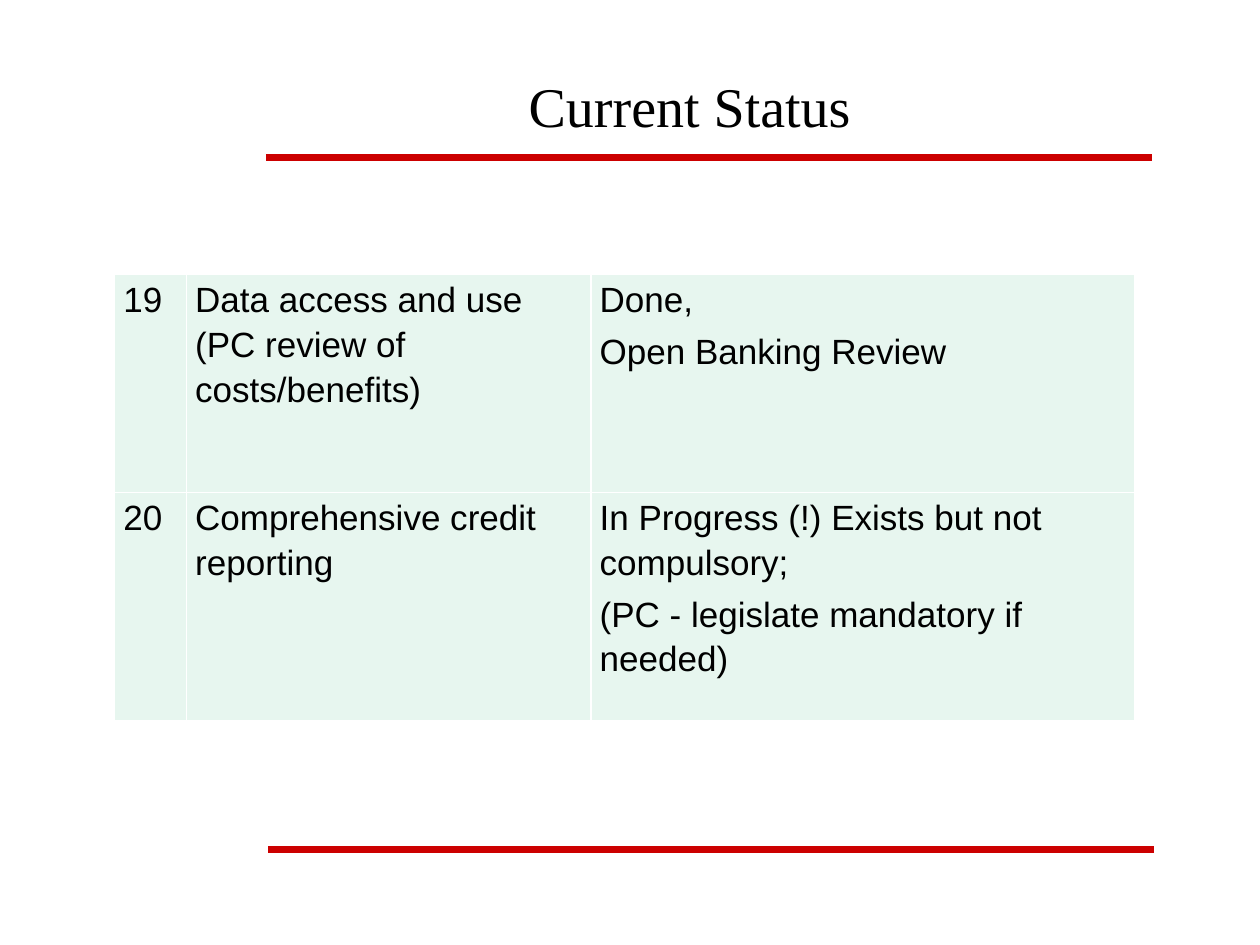
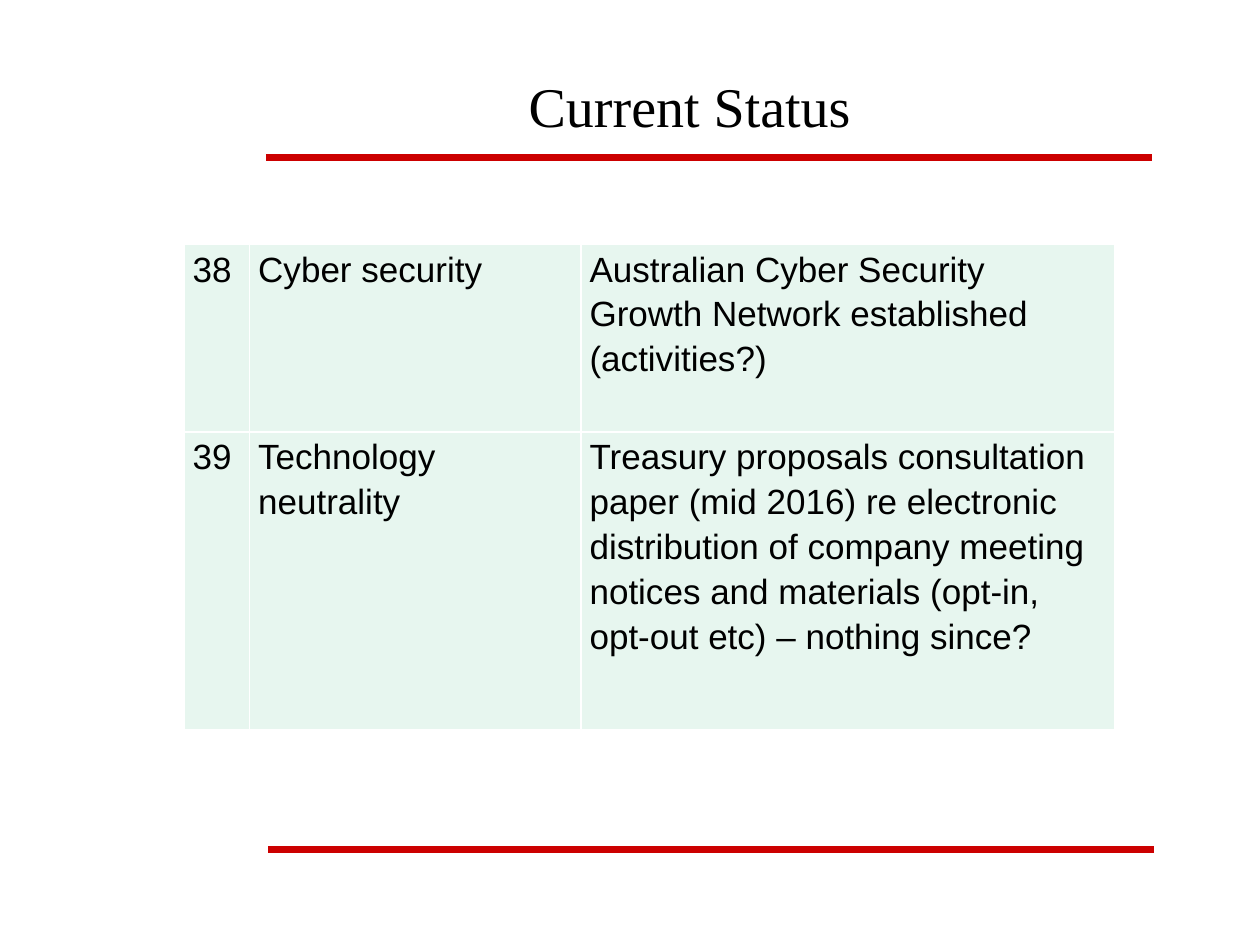
from dataclasses import dataclass

from lxml import etree
from pptx import Presentation
from pptx import util as u
from pptx.dml.color import RGBColor
from pptx.enum import shapes, text
from pptx.oxml import ns

COLORS = {"rule": "CC0000", "ink": "000000", "cell": "E7F6EF", "border": "FFFFFF"}
TITLE_FONT, BODY_FONT = "Times New Roman", "Arial"
WIDTH, HEIGHT = u.Inches(10), u.Inches(7.5)
BLANK_LAYOUT = 6


@dataclass(frozen=True)
class Rule:
    left: float
    top: float
    width: float = 70.3


@dataclass(frozen=True)
class Status:
    """A recommendation; each string in progress is a paragraph."""
    number: str
    topic: str
    progress: tuple[str, ...]
    height: float


@dataclass(frozen=True)
class StatusTable:
    left: float
    top: float
    columns: tuple[float, ...]
    rows: tuple[Status, ...]


RULES = (Rule(21.3, 89.87), Rule(21.1, 16.67))

STATUS_TABLES = (
    StatusTable(9.1, 29.07, (5.7, 32.1, 43.2), (
        Status("19", "Data access and use (PC review of costs/benefits)",
               ("Done,", "Open Banking Review"), 23.07),
        Status("20", "Comprehensive credit reporting",
               ("In Progress (!) Exists but not compulsory;",
                "(PC - legislate mandatory if needed)"), 24.13),
    )),
    StatusTable(14.6, 25.87, (5.2, 26.3, 42.4), (
        Status("38", "Cyber security",
               ("Australian Cyber Security Growth Network established (activities?)",),
               19.87),
        Status("39", "Technology neutrality",
               ("Treasury proposals consultation paper (mid 2016) re electronic "
                "distribution of company meeting notices and materials "
                "(opt-in, opt-out etc) – nothing since?",), 31.47),
    )),
)


def across(percent: float) -> int:
    """Length as a percentage of the slide's width."""
    return round(WIDTH * percent / 100)


def down(percent: float) -> int:
    """Length as a percentage of the slide's height."""
    return round(HEIGHT * percent / 100)


def color(name: str) -> RGBColor:
    return RGBColor.from_string(COLORS[name])


def style_font(paragraph, name: str, size: float) -> None:
    paragraph.font.name = name
    paragraph.font.size = u.Pt(size)
    paragraph.font.color.rgb = color("ink")


def draw_rule(slide, rule: Rule) -> None:
    line = slide.shapes.add_connector(
        shapes.MSO_CONNECTOR.STRAIGHT, across(rule.left), down(rule.top),
        across(rule.left + rule.width), down(rule.top))
    line.line.color.rgb = color("rule")
    line.line.width = u.Pt(4)
    etree.SubElement(line._element.spPr, ns.qn("a:effectLst"))


def draw_title(slide, wording: str) -> None:
    frame = slide.shapes.add_textbox(
        across(17.8), down(5.6), across(73.9), down(11.07)).text_frame
    frame.word_wrap = True
    frame.vertical_anchor = text.MSO_ANCHOR.MIDDLE
    title = frame.paragraphs[0]
    title.text = wording
    title.alignment = text.PP_ALIGN.CENTER
    style_font(title, TITLE_FONT, 32)


def add_borders(cell) -> None:
    properties = cell._tc.get_or_add_tcPr()
    for position, side in enumerate(("lnL", "lnR", "lnT", "lnB")):
        border = etree.Element(ns.qn(f"a:{side}"), w=str(u.Pt(1)))
        fill = etree.SubElement(border, ns.qn("a:solidFill"))
        etree.SubElement(fill, ns.qn("a:srgbClr"), val=COLORS["border"])
        properties.insert(position, border)


def fill_cell(cell, wordings: tuple[str, ...]) -> None:
    cell.margin_left = cell.margin_right = u.Inches(0.07)
    cell.margin_top = cell.margin_bottom = 0
    cell.fill.solid()
    cell.fill.fore_color.rgb = color("cell")
    add_borders(cell)
    cell.text = "\n".join(wordings)
    for index, paragraph in enumerate(cell.text_frame.paragraphs):
        paragraph.line_spacing = 1.15
        paragraph.space_before = u.Pt(2 if index else 0)
        paragraph.space_after = u.Pt(2)
        style_font(paragraph, BODY_FONT, 20)


def draw_status_table(slide, layout: StatusTable) -> None:
    table = slide.shapes.add_table(
        len(layout.rows), len(layout.columns), across(layout.left), down(layout.top),
        across(sum(layout.columns)), down(sum(row.height for row in layout.rows))).table
    table.first_row = table.horz_banding = False
    for column, width in zip(table.columns, layout.columns):
        column.width = across(width)
    for row, status in zip(table.rows, layout.rows):
        row.height = down(status.height)
        contents = ((status.number,), (status.topic,), status.progress)
        for cell, wordings in zip(row.cells, contents):
            fill_cell(cell, wordings)


def main() -> None:
    deck = Presentation()
    deck.slide_width, deck.slide_height = WIDTH, HEIGHT
    for status_table in STATUS_TABLES:
        slide = deck.slides.add_slide(deck.slide_layouts[BLANK_LAYOUT])
        for rule in RULES:
            draw_rule(slide, rule)
        draw_title(slide, "Current Status")
        draw_status_table(slide, status_table)
    deck.save("out.pptx")


if __name__ == "__main__":
    main()
